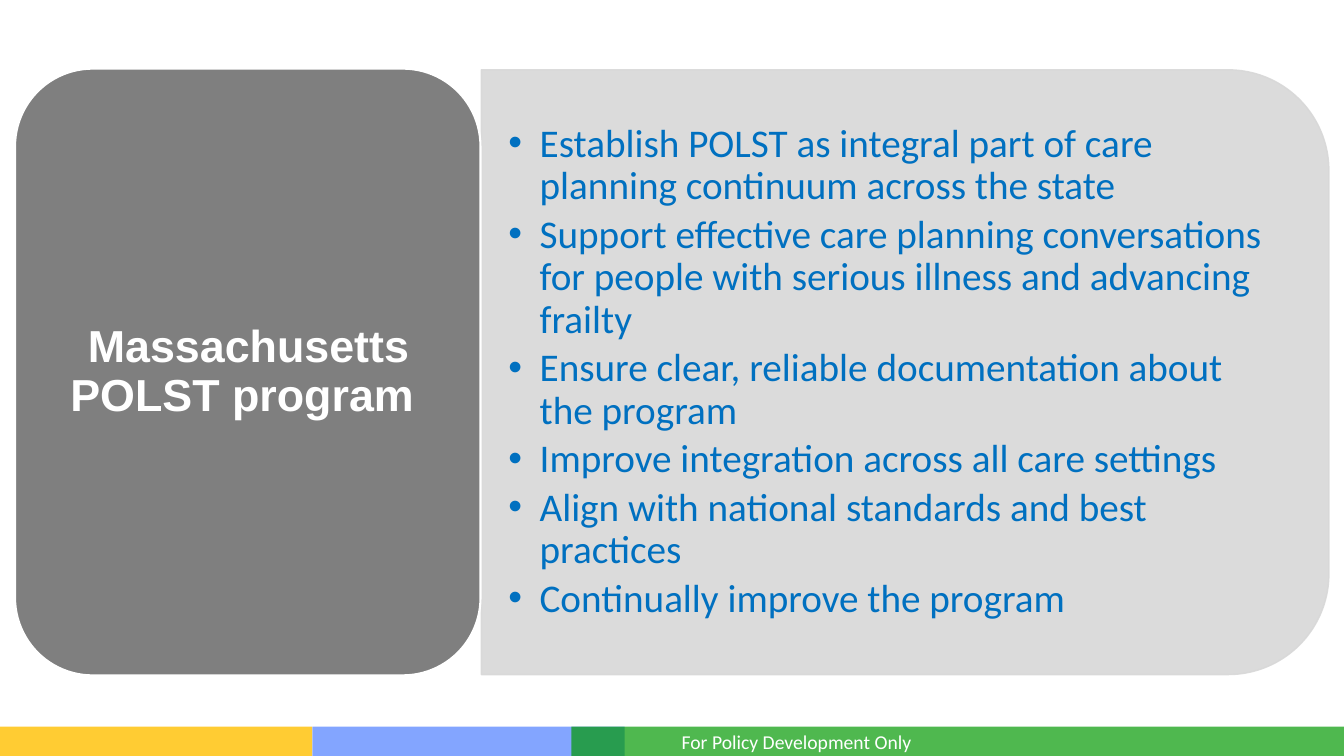
from lxml import etree
from pptx import Presentation
from pptx import util as u
from pptx.dml import color
from pptx.enum import shapes, text
from pptx.oxml import ns

COLOURS = {
    "white": "FFFFFF",
    "yellow": "FFC000",
    "periwinkle": "5E8BFF",
    "green": "009900",
    "panel": "D8D8D8",
    "card": "7F7F7F",
    "goals": "0070C0",
}
GOALS = [
    "Establish POLST as integral part of care planning continuum across the state",
    "Support effective care planning conversations for people with serious illness and advancing frailty",
    "Ensure clear, reliable documentation about the program",
    "Improve integration across all care settings",
    "Align with national standards and best practices",
    "Continually improve the program",
]
BAR_TOP, BAR_HEIGHT = 18.31, 0.74
BAR_PARTS = [
    (7.87, 7.87, "periwinkle", 77),
    (0, 7.87, "yellow", 80),
    (14.4, 19.47, "green", 69),
]


def rgb(name):
    return color.RGBColor.from_string(COLOURS[name])


def set_opacity(shape, percent):
    for element in shape._element.spPr.iter(ns.qn("a:srgbClr")):
        etree.SubElement(element, ns.qn("a:alpha"), val=str(percent * 1000))


def add_block(slide, kind, box, fill, opacity=100, line=None, line_width=1, rotation=0):
    shape = slide.shapes.add_shape(kind, *map(u.Cm, box))
    shape.shadow.inherit = False
    shape.rotation = rotation
    shape.fill.solid()
    shape.fill.fore_color.rgb = rgb(fill)
    if line:
        shape.line.color.rgb = rgb(line)
        shape.line.width = u.Pt(line_width)
    else:
        shape.line.fill.background()
    if opacity < 100:
        set_opacity(shape, opacity)


def place(shape, box):
    shape.left, shape.top, shape.width, shape.height = map(u.Cm, box)
    shape._element.getparent().append(shape._element)


def write(shape, lines, size, colour, font="Calibri", bold=False,
          align=text.PP_ALIGN.LEFT, anchor=text.MSO_ANCHOR.MIDDLE,
          insets=(0.25, 0.13), spacing=1.0, after=0, hanging=0):
    frame = shape.text_frame
    frame.word_wrap = True
    frame.auto_size = text.MSO_AUTO_SIZE.NONE
    frame.vertical_anchor = anchor
    frame.margin_left = frame.margin_right = u.Cm(insets[0])
    frame.margin_top = frame.margin_bottom = u.Cm(insets[1])
    frame.text = "\n".join(lines)
    for paragraph in frame.paragraphs:
        paragraph.alignment = align
        paragraph.line_spacing = spacing
        paragraph.space_before = u.Pt(0)
        paragraph.space_after = u.Pt(after)
        if hanging:
            properties = paragraph._p.get_or_add_pPr()
            properties.set("marL", str(u.Cm(hanging)))
            properties.set("indent", str(-u.Cm(hanging)))
        paragraph.font.name = font
        paragraph.font.size = u.Pt(size)
        paragraph.font.bold = bold
        paragraph.font.color.rgb = rgb(colour)


def add_footer(slide):
    for left, width, fill, opacity in BAR_PARTS:
        add_block(slide, shapes.MSO_SHAPE.RECTANGLE,
                  (left, BAR_TOP, width, BAR_HEIGHT), fill, opacity)
    label = slide.shapes.add_textbox(*map(u.Cm, (16.93, 18.26, 16.93, 0.86)))
    write(label, ["For Policy Development Only"], 14, "white",
          anchor=text.MSO_ANCHOR.TOP)


def add_goals(slide):
    add_block(slide, shapes.MSO_SHAPE.ROUND_2_SAME_RECTANGLE,
              (15.19, -1.3, 15.24, 21.36), "panel", 90, line="panel", rotation=90)
    body = slide.placeholders[1]
    place(body, (12.12, 2.51, 20.62, 13.74))
    write(body, GOALS, 28, "goals", insets=(0.69, 0.36),
          spacing=0.9, after=4.5, hanging=0.79)


def add_program_card(slide):
    add_block(slide, shapes.MSO_SHAPE.ROUNDED_RECTANGLE,
              (0.38, 1.73, 11.73, 15.29), "card", line="white", line_width=1.5)
    title = slide.shapes.title
    place(title, (0.97, 2.31, 10.59, 14.15))
    write(title, ["Massachusetts POLST program "], 32, "white", font="Arial",
          bold=True, align=text.PP_ALIGN.CENTER, insets=(0.33, 0.18), spacing=0.9)


def main():
    presentation = Presentation()
    presentation.slide_width = u.Cm(33.87)
    presentation.slide_height = u.Cm(19.05)
    slide = presentation.slides.add_slide(presentation.slide_layouts[1])
    add_footer(slide)
    add_goals(slide)
    add_program_card(slide)
    presentation.save("out.pptx")


if __name__ == "__main__":
    main()
